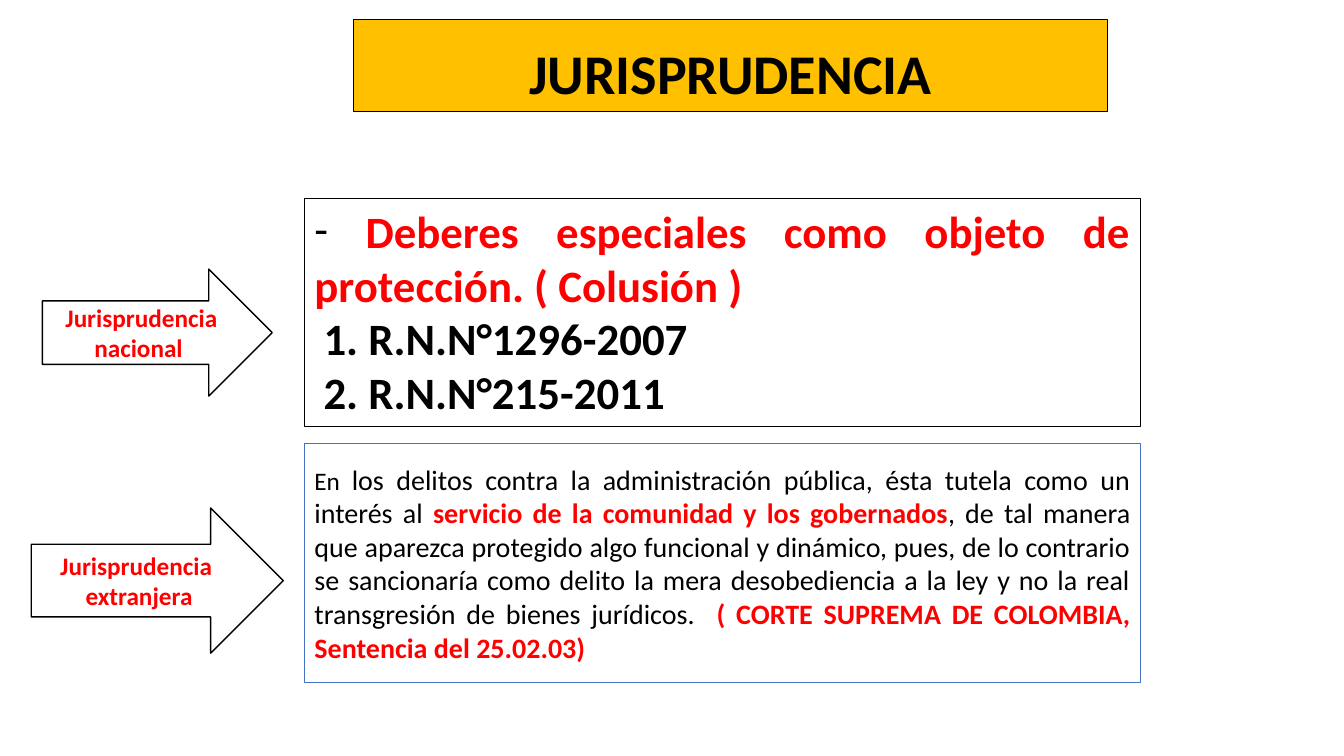
"""Build the slide on national and foreign case law."""
import pptx
import pptx.dml.color
import pptx.enum.shapes
import pptx.enum.text
import pptx.oxml
import pptx.oxml.ns
import pptx.util
from pptx.util import Inches

BLACK = pptx.dml.color.RGBColor(0x00, 0x00, 0x00)
WHITE = pptx.dml.color.RGBColor(0xFF, 0xFF, 0xFF)
RED = pptx.dml.color.RGBColor(0xFF, 0x00, 0x00)
BLUE = pptx.dml.color.RGBColor(0x44, 0x72, 0xC4)
GOLD = pptx.dml.color.RGBColor(0xFF, 0xC0, 0x00)
FONT = "Calibri"
ALIGN = pptx.enum.text.PP_ALIGN
ANCHOR = pptx.enum.text.MSO_ANCHOR
SHAPE = pptx.enum.shapes.MSO_SHAPE
PANEL_LEFT, PANEL_WIDTH = 3.02, 8.29


def paint(shape, fill, line, weight):
    """Set the fill and outline of a shape."""
    shape.fill.solid()
    shape.fill.fore_color.rgb = fill
    shape.line.color.rgb = line
    shape.line.width = pptx.util.Pt(weight)


def write(shape, paragraphs, align, anchor):
    """Fill a shape with paragraphs made of (text, size, colour, bold) runs."""
    frame = shape.text_frame
    frame.word_wrap = True
    frame.vertical_anchor = anchor
    for index, runs in enumerate(paragraphs):
        paragraph = frame.paragraphs[0] if index == 0 else frame.add_paragraph()
        paragraph.alignment = align
        for text, size, color, bold in runs:
            run = paragraph.add_run()
            run.text = text
            run.font.name = FONT
            run.font.size = pptx.util.Pt(size)
            run.font.color.rgb = color
            run.font.bold = bold
    return frame.paragraphs


def add_box(slide, preset, place, line=BLACK):
    """Add a white outlined shape at left, top, width, height in inches."""
    box = slide.shapes.add_shape(preset, *map(Inches, place))
    box.shadow.inherit = False
    paint(box, WHITE, line, 1)
    return box


def add_title(slide, text):
    """Place and format the title placeholder."""
    title = slide.shapes.title
    title.left, title.top = Inches(3.51), Inches(0.19)
    title.width, title.height = Inches(7.47), Inches(0.92)
    paint(title, GOLD, BLACK, 0.75)
    heading, = write(title, [[(text, 40, BLACK, True)]], ALIGN.CENTER, ANCHOR.BOTTOM)
    heading.line_spacing = 0.9
    title.text_frame.auto_size = pptx.enum.text.MSO_AUTO_SIZE.NONE


def add_panel(slide, top, height, line, paragraphs, anchor):
    """Add a justified text panel and return its paragraphs."""
    panel = add_box(slide, SHAPE.RECTANGLE, (PANEL_LEFT, top, PANEL_WIDTH, height), line)
    return write(panel, paragraphs, ALIGN.JUSTIFY, anchor)


def add_arrow(slide, place, lines):
    """Add a labelled arrow pointing to a panel."""
    arrow = add_box(slide, SHAPE.RIGHT_ARROW, place)
    write(arrow, [[(line, 18, RED, True)] for line in lines], ALIGN.CENTER, ANCHOR.MIDDLE)


def add_dash(paragraph):
    """Give a paragraph a dash bullet."""
    properties = paragraph._p.get_or_add_pPr()
    for tag, name, value in (("buFont", "typeface", FONT), ("buChar", "char", "-")):
        bullet = pptx.oxml.parse_xml(f"<a:{tag} {pptx.oxml.ns.nsdecls('a')}/>")
        bullet.set(name, value)
        properties.append(bullet)


def main():
    """Build and save the slide."""
    deck = pptx.Presentation()
    deck.slide_width, deck.slide_height = Inches(13.33), Inches(7.5)
    slide = deck.slides.add_slide(deck.slide_layouts[5])
    add_title(slide, "JURISPRUDENCIA")
    add_panel(slide, 4.4, 2.37, BLUE, [[
        ("En ", 18, BLACK, False),
        ("los delitos contra la administración pública, ésta tutela como un interés al ",
         20, BLACK, False),
        ("servicio de la comunidad y los gobernados", 20, RED, True),
        (", de tal manera que aparezca protegido algo funcional y dinámico, pues, "
         "de lo contrario se sancionaría como delito la mera desobediencia a la ley "
         "y no la real transgresión de bienes jurídicos.  ", 20, BLACK, False),
        ("( CORTE SUPREMA DE COLOMBIA, Sentencia del 25.02.03)", 20, RED, True),
    ]], ANCHOR.MIDDLE)
    duties, *rulings = add_panel(slide, 1.97, 2.26, BLACK, [
        [(" ", 32, BLACK, True),
         ("Deberes especiales como objeto de protección. ( Colusión )", 32, RED, True)],
        [("1. R.N.N°1296-2007 ", 32, BLACK, True)],
        [("2. R.N.N°215-2011", 32, BLACK, True)],
    ], ANCHOR.TOP)
    add_dash(duties)
    for ruling in rulings:
        ruling._p.get_or_add_pPr().set("marL", str(Inches(0.09)))
    add_arrow(slide, (0.42, 2.67, 2.28, 1.26), ["Jurisprudencia nacional "])
    add_arrow(slide, (0.31, 5.04, 2.5, 1.44), ["Jurisprudencia ", "extranjera"])
    deck.save("out.pptx")


if __name__ == "__main__":
    main()
